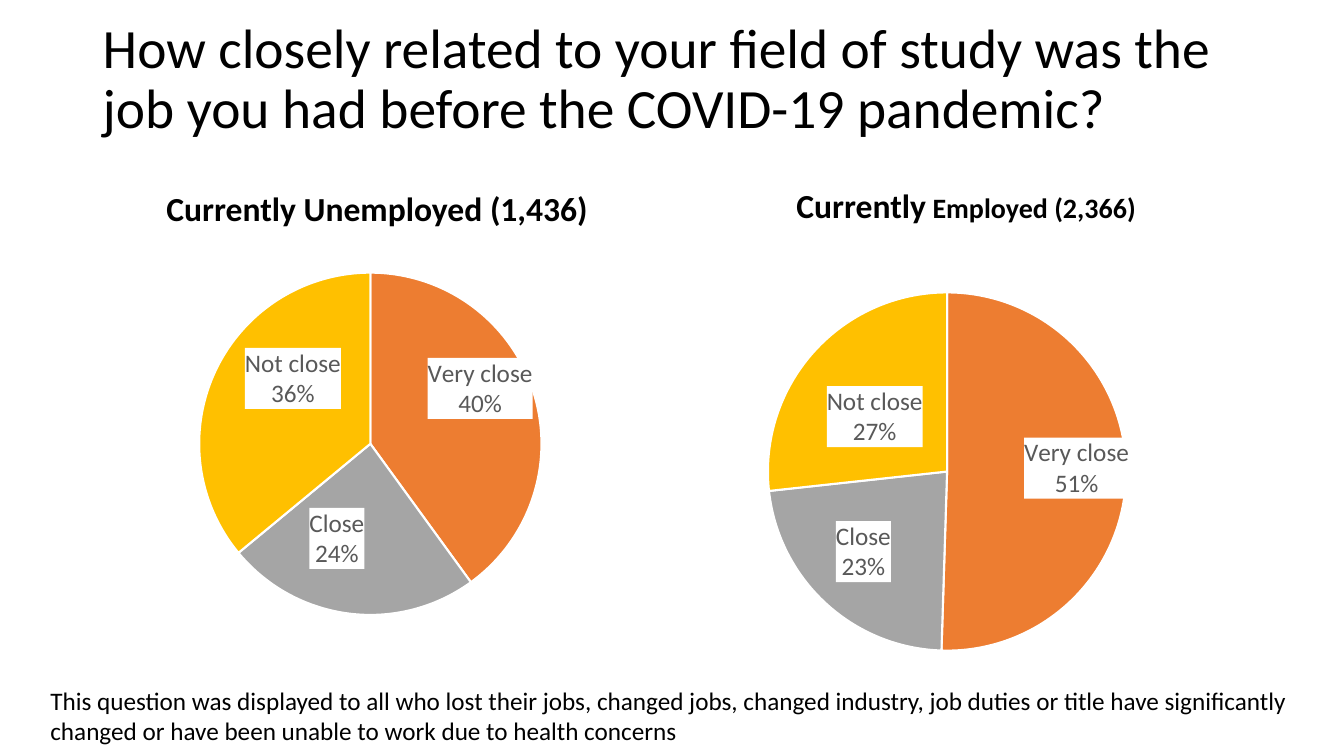
import pptx
import pptx.chart.data
import pptx.dml.color
import pptx.enum.chart
import pptx.enum.text
import pptx.oxml
import pptx.oxml.ns
import pptx.util

Cm = pptx.util.Cm
Pt = pptx.util.Pt
RGB = pptx.dml.color.RGBColor.from_string
MIDDLE = pptx.enum.text.MSO_ANCHOR.MIDDLE
BOTTOM = pptx.enum.text.MSO_ANCHOR.BOTTOM
TOP = pptx.enum.text.MSO_ANCHOR.TOP
LEFT = pptx.enum.text.PP_ALIGN.LEFT
CENTER = pptx.enum.text.PP_ALIGN.CENTER

COLORS = {
    "text": "000000",
    "label": "595959",
    "white": "FFFFFF",
    "Very close": "ED7D31",
    "Close": "A5A5A5",
    "Not close": "FFC000",
}
TITLE = "How closely related to your field of study was the job you had before the COVID-19 pandemic?"
ANSWERS = ["Very close", "Close", "Not close"]
FONT = "Calibri"

deck = pptx.Presentation()
deck.slide_width = Cm(33.87)
deck.slide_height = Cm(19.05)
slide = deck.slides.add_slide(deck.slide_layouts[6])


def add_text(box, parts, anchor, align, bold=False, spacing=1.0):
    frame = slide.shapes.add_textbox(*[Cm(n) for n in box]).text_frame
    frame.word_wrap = True
    frame.vertical_anchor = anchor
    line = frame.paragraphs[0]
    line.alignment = align
    line.line_spacing = spacing
    for words, size in parts:
        run = line.add_run()
        run.text = words
        run.font.name = FONT
        run.font.size = Pt(size)
        run.font.bold = bold
        run.font.color.rgb = RGB(COLORS["text"])


def make_layout(x, y, size=""):
    return pptx.oxml.parse_xml(
        f'<c:layout {pptx.oxml.ns.nsdecls("c")}><c:manualLayout>{size and MODES}'
        f'<c:x val="{x}"/><c:y val="{y}"/>{size}</c:manualLayout></c:layout>'
    )


MODES = '<c:layoutTarget val="inner"/><c:xMode val="edge"/><c:yMode val="edge"/>'
BLANK = f'<c:dLbl {pptx.oxml.ns.nsdecls("c")}><c:idx val="0"/><c:delete val="1"/></c:dLbl>'
LABEL = f"""<c:dLbl {pptx.oxml.ns.nsdecls("c", "a")}><c:idx val="%d"/>
<c:numFmt formatCode="0&quot;%%&quot;" sourceLinked="0"/>
<c:spPr><a:solidFill><a:srgbClr val="{COLORS["white"]}"/></a:solidFill></c:spPr>
<c:txPr><a:bodyPr/><a:p><a:pPr><a:defRPr sz="1800" b="0"><a:solidFill>
<a:srgbClr val="{COLORS["label"]}"/></a:solidFill><a:latin typeface="{FONT}"/>
</a:defRPr></a:pPr><a:endParaRPr lang="en-US"/></a:p></c:txPr>
<c:dLblPos val="ctr"/><c:showLegendKey val="0"/><c:showVal val="1"/>
<c:showCatName val="1"/><c:showSerName val="0"/><c:showPercent val="0"/>
<c:showBubbleSize val="0"/><c:separator>\n</c:separator></c:dLbl>"""

add_text((2.34, 0.2, 29.21, 3.68), [(TITLE, 39.6)], MIDDLE, LEFT, spacing=0.9)

GROUPS = [
    {
        "left": 2.34, "width": 14.33, "top": 3.6,
        "head": [("Currently Unemployed (1,436)", 24)],
        "shares": (0, 40, 24, 36),
        "plot": (0.187, 0.08, 0.602, 0.71),
        "shifts": [(0.05, -0.06), (-0.04, 0.02), (0, -0.06)],
    },
    {
        "left": 17.15, "width": 14.4, "top": 3.53,
        "head": [("Currently", 24), (" Employed (2,366)", 20)],
        "shares": (0, 51, 23, 27),
        "plot": (0.153, 0.12, 0.627, 0.745),
        "shifts": [(0.07, -0.01), (-0.04, 0.03), (-0.01, 0.01)],
    },
]

for group in GROUPS:
    left, width = group["left"], group["width"]
    add_text((left, group["top"], width, 2.29), group["head"], BOTTOM, CENTER, True, 0.9)

    data = pptx.chart.data.CategoryChartData()
    data.categories = [TITLE] + ANSWERS
    data.add_series("Series 1", group["shares"])
    chart = slide.shapes.add_chart(
        pptx.enum.chart.XL_CHART_TYPE.PIE,
        Cm(left), Cm(5.89), Cm(width), Cm(12.17), data,
    ).chart
    chart.has_legend = False
    chart.has_title = False
    chart.font.name = FONT
    chart.font.size = Pt(10)
    chart.font.color.rgb = RGB(COLORS["text"])

    x, y, w, h = group["plot"]
    area = chart.plots[0]._element.getparent()
    for old in area.findall(pptx.oxml.ns.qn("c:layout")):
        area.remove(old)
    area.insert(0, make_layout(x, y, f'<c:w val="{w}"/><c:h val="{h}"/>'))

    pie = chart.plots[0].series[0]
    pie.points[0].format.fill.background()
    pie.points[0].format.line.fill.background()
    labels = pie.data_labels
    labels.show_value = True
    labels.show_category_name = True
    labels._element.insert(0, pptx.oxml.parse_xml(BLANK))
    for i, answer in enumerate(ANSWERS, 1):
        style = pie.points[i].format
        style.fill.solid()
        style.fill.fore_color.rgb = RGB(COLORS[answer])
        style.line.color.rgb = RGB(COLORS["white"])
        style.line.width = Pt(1.5)
        label = pptx.oxml.parse_xml(LABEL % i)
        label.insert(1, make_layout(*group["shifts"][i - 1]))
        labels._element.insert(i, label)

add_text(
    (1.02, 17.15, 32.85, 1.9),
    [("This question was displayed to all who lost their jobs, changed jobs, changed industry, job duties or title have significantly changed or have been unable to work due to health concerns", 18)],
    TOP, LEFT,
)

deck.save("out.pptx")
